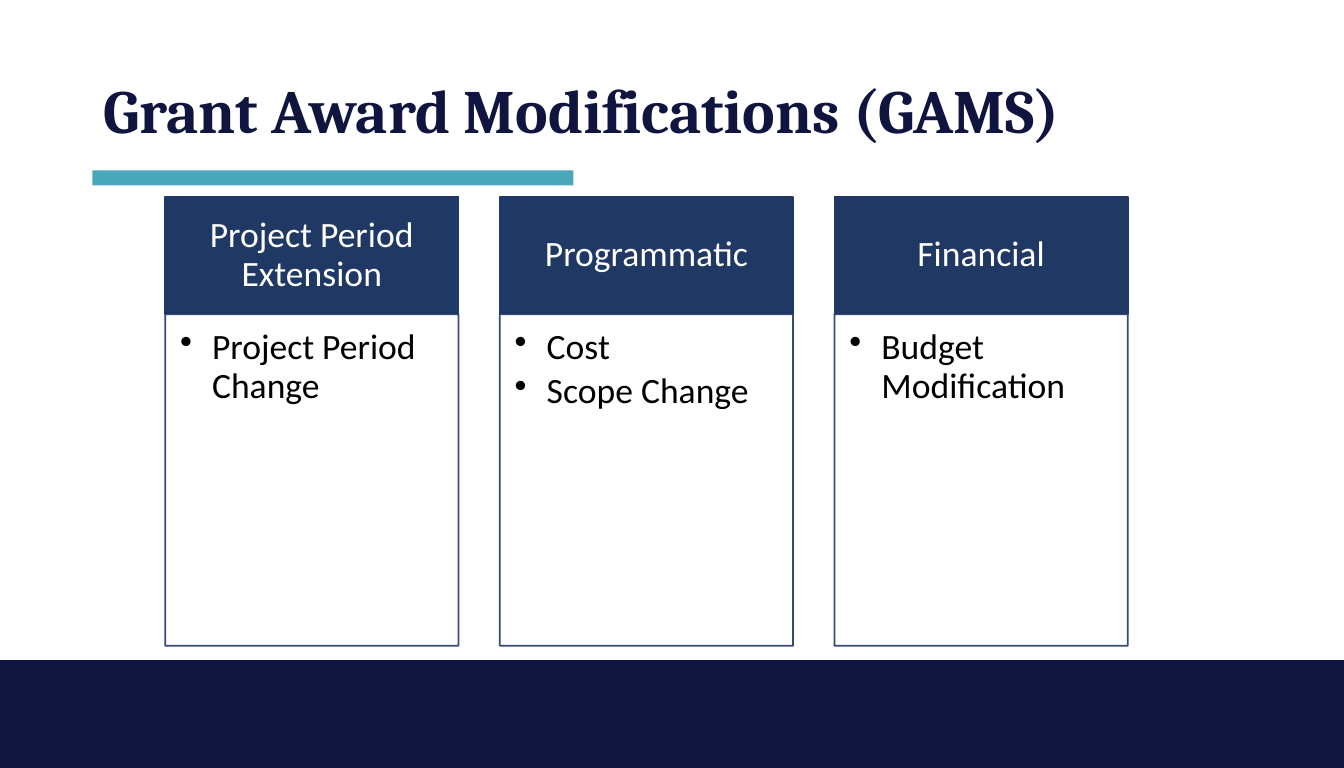
from lxml.etree import SubElement
from pptx import Presentation
from pptx.dml.color import RGBColor
from pptx.enum.shapes import MSO_SHAPE as Shape
from pptx.enum.text import MSO_ANCHOR as Anchor, MSO_AUTO_SIZE as AutoSize, PP_ALIGN as Align
from pptx.oxml.ns import qn
from pptx.util import Pt

NAVY = RGBColor(0x0F, 0x15, 0x3E)
BLUE = RGBColor(0x20, 0x38, 0x64)
TEAL = RGBColor(0x4A, 0xA8, 0xBB)
WHITE = RGBColor(0xFF, 0xFF, 0xFF)
BLACK = RGBColor(0, 0, 0)

COLUMNS = [
    ("Project Period Extension", ["Project Period Change"]),
    ("Programmatic", ["Cost", "Scope Change"]),
    ("Financial", ["Budget Modification"]),
]
FIRST_LEFT, COLUMN_PITCH, COLUMN_WIDTH = 92.9, 188.25, 165
HEADER_TOP, HEADER_HEIGHT = 110.7, 66
BODY_HEIGHT = 186.5


def add_box(slide, left, top, width, height, fill, line=None):
    box = slide.shapes.add_shape(Shape.RECTANGLE, Pt(left), Pt(top), Pt(width), Pt(height))
    box.shadow.inherit = False
    box.fill.solid()
    box.fill.fore_color.rgb = fill
    if line is None:
        box.line.fill.background()
    else:
        box.line.color.rgb = line
        box.line.width = Pt(1)
    return box


def set_insets(frame, left, top, right, bottom):
    frame.margin_left, frame.margin_top = Pt(left), Pt(top)
    frame.margin_right, frame.margin_bottom = Pt(right), Pt(bottom)


def style_paragraph(paragraph, font_name, size, color, align, space_after=0):
    paragraph.font.name = font_name
    paragraph.font.size = Pt(size)
    paragraph.font.color.rgb = color
    paragraph.alignment = align
    paragraph.line_spacing = 0.9
    paragraph.space_after = Pt(space_after)


def add_bullet(paragraph):
    properties = paragraph._p.get_or_add_pPr()
    properties.set("marL", str(Pt(18)))
    properties.set("indent", str(-Pt(18)))
    bullet = properties.makeelement(qn("a:buChar"), {"char": "•"})
    properties.insert_element_before(bullet, "a:tabLst", "a:defRPr", "a:extLst")


def set_opacity(box, percent):
    for color in box._element.spPr.iter(qn("a:srgbClr")):
        SubElement(color, qn("a:alpha"), val=str(percent * 1000))


def add_title(slide, text):
    title = slide.shapes.title
    title.left, title.top, title.width, title.height = Pt(51), Pt(18), Pt(626.4), Pt(91.4)
    frame = title.text_frame
    frame.text = text
    frame.auto_size = AutoSize.NONE
    frame.vertical_anchor = Anchor.MIDDLE
    heading = frame.paragraphs[0]
    style_paragraph(heading, "Cambria", 34.6, NAVY, Align.LEFT)
    heading.font.bold = True


def add_column(slide, left, heading, items):
    header = add_box(slide, left, HEADER_TOP, COLUMN_WIDTH, HEADER_HEIGHT, BLUE, BLUE)
    frame = header.text_frame
    frame.text = heading
    frame.word_wrap = True
    frame.vertical_anchor = Anchor.MIDDLE
    set_insets(frame, 11.2, 6.4, 11.2, 6.4)
    style_paragraph(frame.paragraphs[0], "Calibri", 20, WHITE, Align.CENTER, 7)

    body = add_box(slide, left, HEADER_TOP + HEADER_HEIGHT, COLUMN_WIDTH, BODY_HEIGHT, WHITE, BLUE)
    set_opacity(body, 90)
    frame = body.text_frame
    frame.text = "\n".join(items)
    frame.word_wrap = True
    frame.vertical_anchor = Anchor.TOP
    set_insets(frame, 8.4, 8.4, 11.2, 12.6)
    for paragraph in frame.paragraphs:
        style_paragraph(paragraph, "Calibri", 20, BLACK, Align.LEFT, 3)
        add_bullet(paragraph)


def main():
    presentation = Presentation()
    presentation.slide_width, presentation.slide_height = Pt(756), Pt(432)
    slide = presentation.slides.add_slide(presentation.slide_layouts[5])
    add_box(slide, 52, 95.8, 270.5, 8.5, TEAL)
    add_box(slide, 0, 371.3, 756, 60.7, NAVY)
    add_title(slide, "Grant Award Modifications (GAMS)")
    for index, (heading, items) in enumerate(COLUMNS):
        add_column(slide, FIRST_LEFT + index * COLUMN_PITCH, heading, items)
    presentation.save("out.pptx")


if __name__ == "__main__":
    main()
